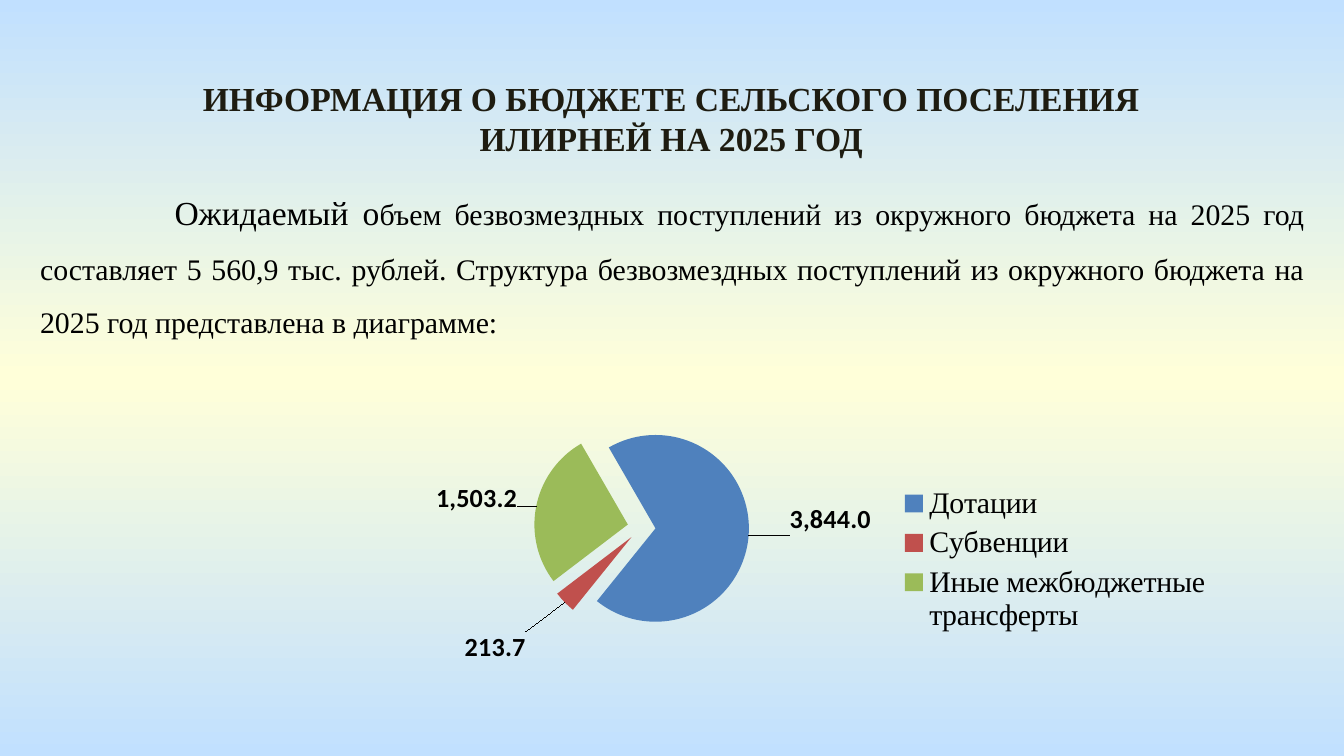
from copy import deepcopy

from lxml import etree
from pptx import Presentation
from pptx.chart.data import CategoryChartData
from pptx.dml.color import RGBColor
from pptx.enum import chart as ch, text
from pptx.oxml.ns import qn
from pptx.util import Inches, Pt

SERIF = "Times New Roman"


def style(font, size, name, color="000000", bold=False):
    font.size, font.name, font.bold = Pt(size), name, bold
    font.color.rgb = RGBColor.from_string(color)


def layout(**vals):
    """Return a manual chart layout; values are fractions of the chart."""
    root = etree.Element(qn("c:layout"))
    man = etree.SubElement(root, qn("c:manualLayout"))
    for key, val in vals.items():
        etree.SubElement(man, qn("c:" + key), val=str(val))
    return root


prs = Presentation()
prs.slide_width, prs.slide_height = Inches(10), Inches(10 * 9 / 16)
slide = prs.slides.add_slide(prs.slide_layouts[6])

# Background: blue, yellow, blue from top to bottom
fill = slide.background.fill
fill.gradient()
fill.gradient_angle = 90
stops = slide.element.find(".//" + qn("a:gsLst"))
stops.insert(1, deepcopy(stops[0]))
for stop, pos, color in zip(fill.gradient_stops, (0, 0.5, 1),
                            ("C1E0FF", "FFFFD9", "C1E0FF")):
    stop.position = pos
    stop.color.rgb = RGBColor.from_string(color)

# Title
box = slide.shapes.add_textbox(Inches(1.13), Inches(0.53), Inches(7.73), Inches(0.71))
box.text_frame.word_wrap = True
para = box.text_frame.paragraphs[0]
para.text = "ИНФОРМАЦИЯ О БЮДЖЕТЕ СЕЛЬСКОГО ПОСЕЛЕНИЯ ИЛИРНЕЙ НА 2025 ГОД"
para.alignment = text.PP_ALIGN.CENTER
style(para.font, 18, SERIF, "1E1C11", True)

# Body
box = slide.shapes.add_textbox(Inches(0.2), Inches(1.23), Inches(9.61), Inches(1.36))
box.text_frame.word_wrap = True
para = box.text_frame.paragraphs[0]
para.alignment = text.PP_ALIGN.JUSTIFY
para.line_spacing = 1.5
para._p.get_or_add_pPr().set("indent", str(Inches(1)))
for words, size in (
    ("Ожидаемый о", 18),
    ("бъем безвозмездных поступлений из окружного бюджета на 2025 год "
     "составляет 5 560,9 тыс. рублей. Структура безвозмездных поступлений "
     "из окружного бюджета на 2025 год представлена в диаграмме:", 16),
):
    run = para.add_run()
    run.text = words
    style(run.font, size, SERIF)

# Pie chart
data = CategoryChartData(number_format="#,##0.0")
data.categories = ["Дотации", "Субвенции", "Иные межбюджетные трансферты"]
data.add_series("Series 1", (3844, 213.7, 1503.2))
chart = slide.shapes.add_chart(
    ch.XL_CHART_TYPE.PIE, Inches(0.88), Inches(2.89), Inches(8.25), Inches(2.55), data
).chart
chart.has_title = False
style(chart.font, 18, "Calibri")
chart.has_legend = True
legend = chart.legend
legend.position = ch.XL_LEGEND_POSITION.RIGHT
legend.include_in_layout = False
style(legend.font, 16, SERIF)

plot = chart.plots[0]
plot.vary_by_categories = True
pie = plot.series[0]
labels = pie.data_labels
labels.show_value = True
labels.number_format = "#,##0.0"
labels.number_format_is_linked = False
labels.position = ch.XL_LABEL_POSITION.OUTSIDE_END
style(labels.font, 14, "Calibri", bold=True)

looks = (("4F81BD", 0.03, -0.05), ("C0504D", -0.03, 0.07), ("9BBB59", -0.01, 0.03))
for idx, (color, x, y) in enumerate(looks):
    point = pie.points[idx]
    point.format.fill.solid()
    point.format.fill.fore_color.rgb = RGBColor.from_string(color)
    label = point.data_label
    style(label.font, 14, "Calibri", bold=True)
    label.position = ch.XL_LABEL_POSITION.OUTSIDE_END
    # Shift each label off its slice so that a leader line shows
    node = pie._element.findall(".//" + qn("c:dLbl"))[idx]
    node.insert(1, layout(x=x, y=y))
    node.insert(2, deepcopy(pie._element.find(qn("c:dLbls") + "/" + qn("c:numFmt"))))

# Pulled-out slices, first angle, and places of plot and legend
burst = etree.Element(qn("c:explosion"), val="15")
pie._element.find(qn("c:dPt")).addprevious(burst)
root = plot._element
for old in root.findall(qn("c:firstSliceAng")):
    root.remove(old)
etree.SubElement(root, qn("c:firstSliceAng"), val="330")
area = root.getparent()
for old in area.findall(qn("c:layout")):
    area.remove(old)
area.insert(0, layout(layoutTarget="inner", xMode="edge", yMode="edge",
                      x=0.375, y=0.092, w=0.194, h=0.627))
node = legend._element
for old in node.findall(qn("c:layout")):
    node.remove(old)
node.find(qn("c:legendPos")).addnext(
    layout(xMode="edge", yMode="edge", x=0.7, y=0.27, w=0.29, h=0.46))

prs.save("out.pptx")
